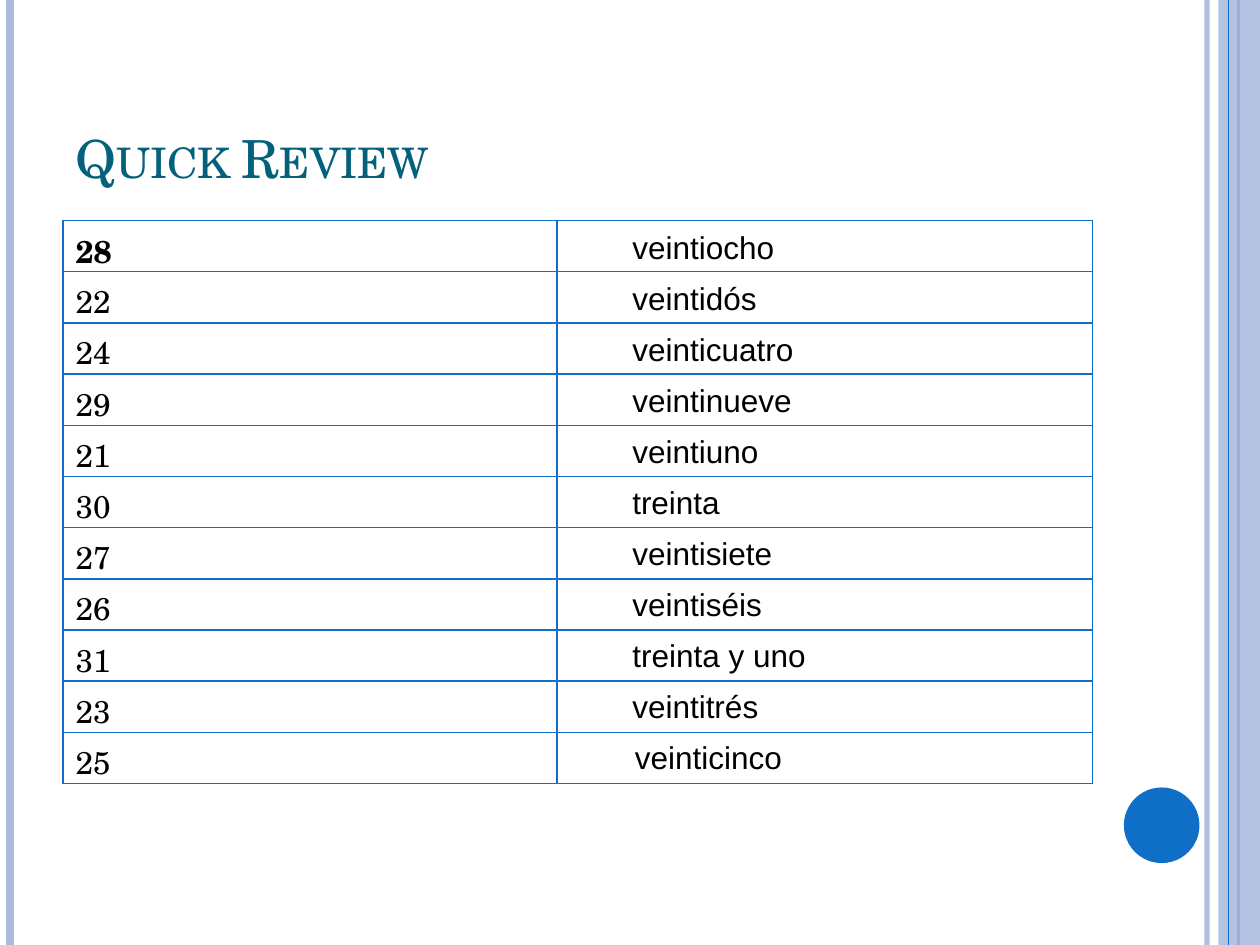
from pptx import Presentation
from pptx import util as u
from pptx.dml.color import RGBColor
from pptx.enum import shapes, text
from pptx.oxml.ns import qn
from lxml import etree

SERIF, SANS = "TeX Gyre Schola", "Arial"
BLUE, PALE, TEAL, BLACK = "0F6FC6", "ABBBDF", "04617B", "000000"
ROWS = [
    ("28", "veintiocho", 1.35),
    ("22", "veintidós", 1.21),
    ("24", "veinticuatro", 1.51),
    ("29", "veintinueve", 1.49),
    ("21", "veintiuno", 1.23),
    ("30", "treinta", 0.9),
    ("27", "veintisiete", 1.34),
    ("26", "veintiséis", 1.25),
    ("31", "treinta y uno", 1.59),
    ("23", "veintitrés", 1.23),
    ("25", "veinticinco", 1.39),
]


def rgb(color):
    return RGBColor.from_string(color)


def set_alpha(element, percent):
    for clr in element.iter(qn("a:srgbClr")):
        etree.SubElement(clr, qn("a:alpha"), val=str(percent * 1000))


def set_font(p, name, size, color, bold=False):
    p.font.name, p.font.size, p.font.bold = name, u.Pt(size), bold
    p.font.color.rgb = rgb(color)


def add_rule(s, x, color, width, alpha=100):
    line = s.shapes.add_connector(
        shapes.MSO_CONNECTOR.STRAIGHT, u.Inches(x), 0, u.Inches(x), u.Inches(7.5))
    line.line.color.rgb = rgb(color)
    line.line.width = u.Pt(width)
    if alpha < 100:
        set_alpha(line._element.spPr, alpha)
    etree.SubElement(line._element.spPr, qn("a:effectLst"))


def add_block(s, kind, x, y, w, h, color, alpha=100):
    sp = s.shapes.add_shape(kind, u.Inches(x), u.Inches(y), u.Inches(w), u.Inches(h))
    sp.shadow.inherit = False
    sp.fill.solid()
    sp.fill.fore_color.rgb = rgb(color)
    sp.line.fill.background()
    if alpha < 100:
        set_alpha(sp._element.spPr, alpha)


def add_text(s, words, x, y, w, h, name, size, color, wrap=False):
    sp = s.shapes.add_textbox(u.Inches(x), u.Inches(y), u.Inches(w), u.Inches(h))
    tf = sp.text_frame
    tf.word_wrap = wrap
    p = tf.paragraphs[0]
    p.add_run().text = words
    set_font(p, name, size, color)
    return tf


def add_title(s, words):
    tf = add_text(s, words, 0.5, 0.3, 8.17, 1.25, SERIF, 30, TEAL, wrap=True)
    tf.vertical_anchor = text.MSO_ANCHOR.BOTTOM
    tf.paragraphs[0].runs[0].font._element.set("cap", "small")


def set_borders(cell, color, width):
    tcPr = cell._tc.get_or_add_tcPr()
    for i, side in enumerate(("lnL", "lnR", "lnT", "lnB")):
        ln = etree.Element(qn(f"a:{side}"), w=str(u.Pt(width)))
        fill = etree.SubElement(ln, qn("a:solidFill"))
        etree.SubElement(fill, qn("a:srgbClr"), val=color)
        tcPr.insert(i, ln)


def add_number_table(s, numbers):
    table = s.shapes.add_table(
        len(numbers), 2, u.Inches(0.5), u.Inches(1.75), u.Inches(8.17), u.Inches(4.47)).table
    table.first_row = table.horz_banding = False
    table.columns[0].width = u.Inches(3.92)
    table.columns[1].width = u.Inches(4.25)
    for i, number in enumerate(numbers):
        table.cell(i, 0).text = number
        for cell in table.rows[i].cells:
            cell.fill.background()
            set_borders(cell, BLUE, 1)
            set_font(cell.text_frame.paragraphs[0], SERIF, 18, BLACK, bold=i == 0)


def main():
    prs = Presentation()
    prs.slide_width, prs.slide_height = u.Inches(10), u.Inches(7.5)
    s = prs.slides.add_slide(prs.slide_layouts[6])

    add_rule(s, 9.58, PALE, 3, alpha=93)
    add_rule(s, 0.08, PALE, 4.5)
    add_rule(s, 9.83, BLUE, 1.5)
    add_block(s, shapes.MSO_SHAPE.RECTANGLE, 9.67, 0, 0.33, 7.5, PALE, alpha=87)
    add_rule(s, 9.75, BLUE, 0.75)
    add_block(s, shapes.MSO_SHAPE.OVAL, 8.92, 6.25, 0.6, 0.6, BLUE)

    add_title(s, "Quick Review")
    add_number_table(s, [number for number, _, _ in ROWS])
    for i, (_, word, width) in enumerate(ROWS):
        x = 4.94 if word == "veinticinco" else 4.92
        add_text(s, word, x, 1.76 + 0.405 * i, width, 0.4, SANS, 18, BLACK)

    prs.save("out.pptx")


if __name__ == "__main__":
    main()
